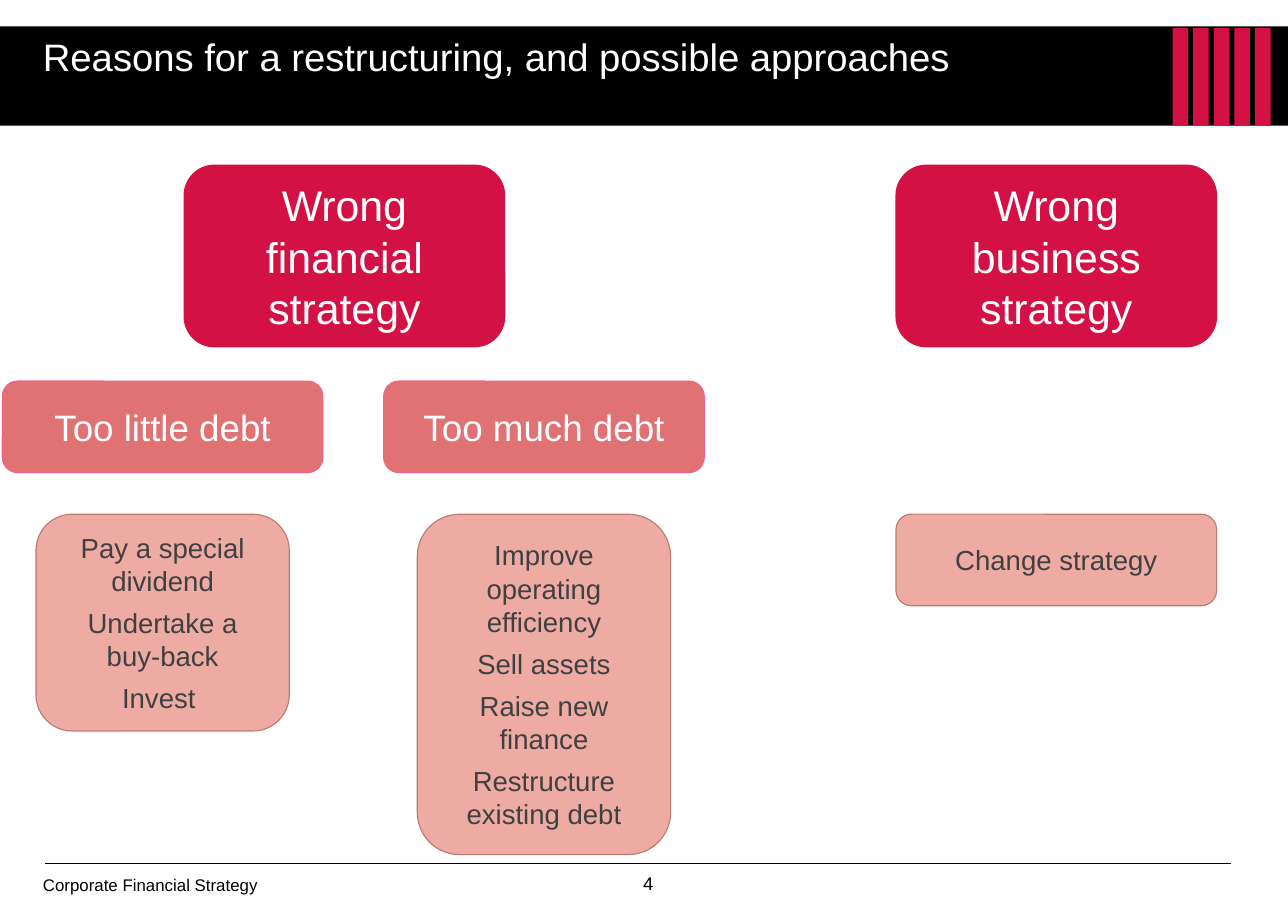
from dataclasses import dataclass

from lxml import etree
from pptx import Presentation
from pptx.dml.color import RGBColor
from pptx.enum.shapes import MSO_CONNECTOR, MSO_SHAPE
from pptx.enum.text import MSO_ANCHOR, PP_ALIGN
from pptx.oxml.ns import qn
from pptx.slide import Slide
from pptx.text.text import TextFrame
from pptx.util import Cm, Pt

BLACK = RGBColor(0x00, 0x00, 0x00)
WHITE = RGBColor(0xFF, 0xFF, 0xFF)
RED = RGBColor(0xD3, 0x11, 0x45)
CORAL = RGBColor(0xE1, 0x72, 0x73)
PINK = RGBColor(0xF2, 0x62, 0x89)
BLUSH = RGBColor(0xED, 0xAB, 0xA3)
BROWN = RGBColor(0xBD, 0x7A, 0x70)
GREY = RGBColor(0x40, 0x40, 0x40)

RECT, ROUND = MSO_SHAPE.RECTANGLE, MSO_SHAPE.ROUNDED_RECTANGLE
LINE = MSO_CONNECTOR.STRAIGHT
TOP, MIDDLE = MSO_ANCHOR.TOP, MSO_ANCHOR.MIDDLE
LEFT, CENTER, RIGHT = PP_ALIGN.LEFT, PP_ALIGN.CENTER, PP_ALIGN.RIGHT

FONT = "Arial"
PAGE_W, PAGE_H = 29.69, 21.01
STRIPES, STRIPE_X, STRIPE_STEP = 5, 27.03, 0.475
WIDE, SLIM, SHORT = 7.39, 5.84, 2.11


@dataclass(frozen=True)
class Level:
    """Look shared by all boxes in one row of the tree."""
    top: float
    fill: RGBColor
    edge: RGBColor
    ink: RGBColor
    size: float
    after: float = 0


@dataclass(frozen=True)
class Box:
    level: Level
    mid: float
    width: float
    height: float
    lines: tuple[str, ...]


@dataclass(frozen=True)
class Label:
    left: float
    top: float
    width: float
    height: float
    text: str
    size: float
    ink: RGBColor
    align: PP_ALIGN = LEFT
    pad: tuple[float, float] = (0, 0)


CAUSE = Level(3.81, RED, RED, WHITE, 28)
DEBT = Level(8.79, CORAL, PINK, WHITE, 24)
CURE = Level(11.86, BLUSH, BROWN, GREY, 18, 6)

LITTLE, MUCH, FINANCE, BUSINESS = 3.75, 12.54, 7.94, 24.35

BOXES = (
    Box(CAUSE, BUSINESS, WIDE, 4.19, ("Wrong business strategy",)),
    Box(CAUSE, FINANCE, WIDE, 4.19, ("Wrong financial strategy",)),
    Box(DEBT, LITTLE, WIDE, SHORT, ("Too little debt",)),
    Box(DEBT, MUCH, WIDE, SHORT, ("Too much debt",)),
    Box(CURE, LITTLE, SLIM, 5, (
        "Pay a special dividend", "Undertake a buy-back", "Invest ")),
    Box(CURE, MUCH, SLIM, 7.85, (
        "Improve operating efficiency", "Sell assets",
        "Raise new finance", "Restructure existing debt")),
    Box(CURE, BUSINESS, WIDE, SHORT, ("Change strategy",)),
)

LABELS = (
    Label(0.99, 0.76, 24.84, 1.65,
          "Reasons for a restructuring, and possible approaches", 25, WHITE),
    Label(0.99, 20.17, 5.97, 0.58, "Corporate Financial Strategy", 11, BLACK),
    Label(9.37, 19.99, 5.94, 0.76, "4", 12, BLACK, RIGHT, (0.25, 0.13)),
)


def write(frame: TextFrame, lines: tuple[str, ...], size: float,
          ink: RGBColor, align: PP_ALIGN, after: float = 0) -> None:
    frame.word_wrap = True
    for i, line in enumerate(lines):
        para = frame.add_paragraph() if i else frame.paragraphs[0]
        para.text = line
        para.alignment = align
        para.space_after = Pt(after)
        para.font.name = FONT
        para.font.size = Pt(size)
        para.font.color.rgb = ink


def add_bar(slide: Slide, left: float, top: float, width: float,
            height: float, fill: RGBColor) -> None:
    bar = slide.shapes.add_shape(RECT, Cm(left), Cm(top), Cm(width), Cm(height))
    bar.shadow.inherit = False
    bar.fill.solid()
    bar.fill.fore_color.rgb = fill
    bar.line.fill.background()


def add_box(slide: Slide, box: Box) -> None:
    level = box.level
    shape = slide.shapes.add_shape(
        ROUND, Cm(box.mid - box.width / 2), Cm(level.top),
        Cm(box.width), Cm(box.height))
    shape.shadow.inherit = False
    shape.fill.solid()
    shape.fill.fore_color.rgb = level.fill
    shape.line.color.rgb = level.edge
    shape.line.width = Pt(0.75)
    frame = shape.text_frame
    frame.vertical_anchor = MIDDLE
    write(frame, box.lines, level.size, level.ink, CENTER, level.after)


def add_label(slide: Slide, label: Label) -> None:
    frame = slide.shapes.add_textbox(
        Cm(label.left), Cm(label.top),
        Cm(label.width), Cm(label.height)).text_frame
    frame.vertical_anchor = TOP
    side, edge = label.pad
    frame.margin_left = frame.margin_right = Cm(side)
    frame.margin_top = frame.margin_bottom = Cm(edge)
    write(frame, (label.text,), label.size, label.ink, label.align)


def add_rule(slide: Slide, left: float, right: float, top: float) -> None:
    rule = slide.shapes.add_connector(
        LINE, Cm(left), Cm(top), Cm(right), Cm(top))
    rule.line.color.rgb = BLACK
    rule.line.width = Pt(0.5)
    etree.SubElement(rule._element.spPr, qn("a:effectLst"))


def main() -> None:
    deck = Presentation()
    deck.slide_width, deck.slide_height = Cm(PAGE_W), Cm(PAGE_H)
    slide = deck.slides.add_slide(deck.slide_layouts[6])
    add_bar(slide, 0, 0.61, PAGE_W, 2.29, BLACK)
    for i in range(STRIPES):
        add_bar(slide, STRIPE_X + i * STRIPE_STEP, 0.65, 0.36, 2.25, RED)
    add_rule(slide, 1.04, 28.37, 19.91)
    for label in LABELS:
        add_label(slide, label)
    for box in BOXES:
        add_box(slide, box)
    deck.save("out.pptx")


if __name__ == "__main__":
    main()
